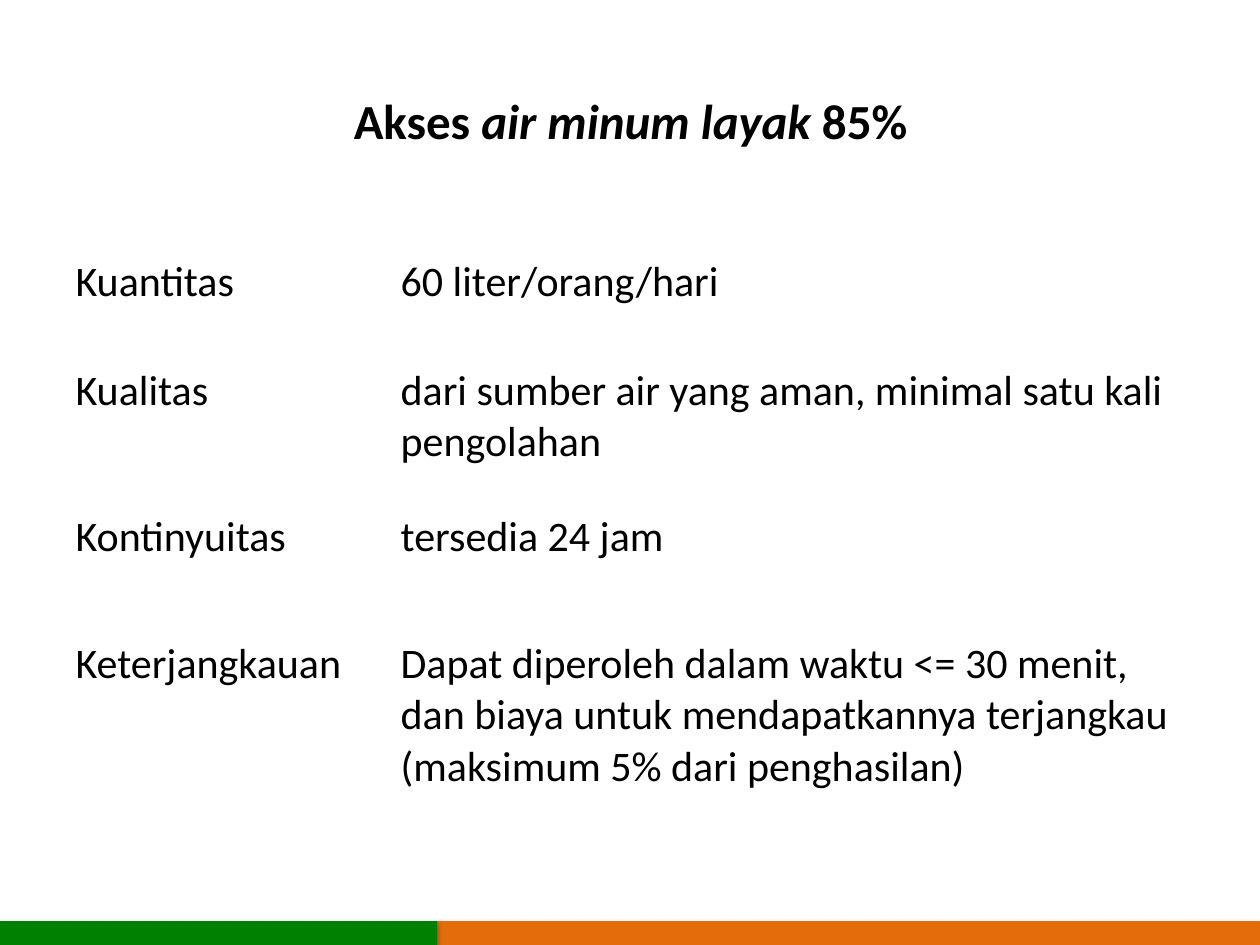
from lxml import etree
from pptx import Presentation
from pptx.dml.color import RGBColor
from pptx.enum.shapes import MSO_SHAPE as Shape
from pptx.enum.text import MSO_ANCHOR as Anchor, PP_ALIGN as Align
from pptx.oxml import parse_xml
from pptx.oxml.ns import nsdecls, qn
from pptx.util import Inches, Pt

BLACK = RGBColor(0x00, 0x00, 0x00)
GREEN = RGBColor(0x00, 0x80, 0x00)
ORANGE = RGBColor(0xE4, 0x6C, 0x0A)

SHADOW = (
    f'<a:effectLst {nsdecls("a")}>'
    f'<a:outerShdw blurRad="{Pt(3.1)}" dist="{Pt(1.8)}" dir="5400000" rotWithShape="0">'
    '<a:srgbClr val="000000"><a:alpha val="35000"/></a:srgbClr>'
    '</a:outerShdw></a:effectLst>'
)


class SlideBuilder:
    font = "Calibri"
    title_size = Pt(28)
    body_size = Pt(24)

    def __init__(self, page):
        self.page = page

    def add_span(self, para, text, size, bold=False, italic=False):
        span = para.add_run()
        span.text = text
        span.font.name = self.font
        span.font.size = size
        span.font.bold = bold
        span.font.italic = italic
        span.font.color.rgb = BLACK

    def title(self, left, top, width, height, spans):
        box = self.page.shapes.title
        box.left, box.top = Inches(left), Inches(top)
        box.width, box.height = Inches(width), Inches(height)
        frame = box.text_frame
        frame.word_wrap = False
        frame.vertical_anchor = Anchor.MIDDLE
        para = frame.paragraphs[0]
        para.alignment = Align.CENTER
        for text, italic in spans:
            self.add_span(para, text, self.title_size, bold=True, italic=italic)

    def table(self, left, top, widths, heights, rows):
        holder = self.page.shapes.add_table(
            len(rows), len(widths), Inches(left), Inches(top),
            Inches(sum(widths)), Inches(sum(heights)))
        table = holder.table
        table.first_row = table.horz_banding = False
        for column, width in zip(table.columns, widths):
            column.width = Inches(width)
        for row, height, texts in zip(table.rows, heights, rows):
            row.height = Inches(height)
            for cell, text in zip(row.cells, texts):
                cell.fill.background()
                if text:
                    self.add_span(cell.text_frame.paragraphs[0], text, self.body_size)

    def bar(self, left, top, width, height, color):
        bar = self.page.shapes.add_shape(
            Shape.RECTANGLE, Inches(left), Inches(top), Inches(width), Inches(height))
        bar.fill.solid()
        bar.fill.fore_color.rgb = color
        bar.line.fill.background()
        # Soft shadow straight below the bar
        properties = bar.fill._xPr
        for effects in properties.findall(qn("a:effectLst")):
            properties.remove(effects)
        etree.SubElement(properties, qn("a:effectLst"))
        properties.replace(properties[-1], parse_xml(SHADOW))


def main():
    deck = Presentation()
    deck.slide_width, deck.slide_height = Inches(10), Inches(7.5)
    builder = SlideBuilder(deck.slides.add_slide(deck.slide_layouts[5]))

    # Heading
    builder.title(2.68, 0.67, 4.65, 0.57, [
        ("Akses ", False), ("air minum layak", True), (" 85%", False)])

    # Criteria, with an empty row above and below
    builder.table(0.5, 1.49, [2.58, 6.42], [0.5, 0.86, 1.16, 1.01, 1.31, 0.5], [
        ("", ""),
        ("Kuantitas", "60 liter/orang/hari"),
        ("Kualitas", "dari sumber air yang aman, minimal satu kali pengolahan"),
        ("Kontinyuitas", "tersedia 24 jam"),
        ("Keterjangkauan", "Dapat diperoleh dalam waktu <= 30 menit, dan biaya untuk "
                           "mendapatkannya terjangkau (maksimum 5% dari penghasilan)"),
        ("", ""),
    ])

    # Footer stripe
    split, top, height = 3.47, 7.31, 0.19
    builder.bar(split, top, 10 - split, height, ORANGE)
    builder.bar(0, top, split, height, GREEN)

    deck.save("out.pptx")


if __name__ == "__main__":
    main()
